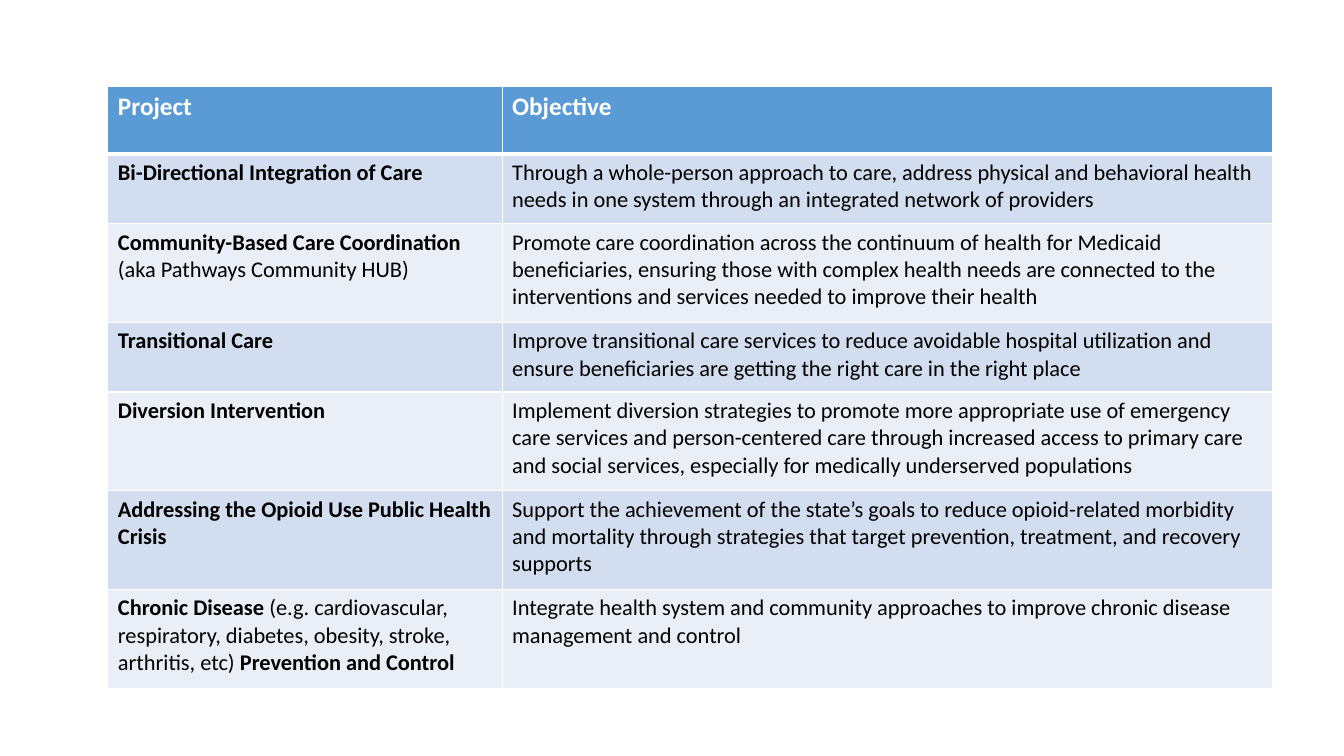
from dataclasses import dataclass

from lxml.etree import SubElement as Sub
from pptx import Presentation
from pptx.dml.color import RGBColor as RGB
from pptx.oxml.ns import qn
from pptx.util import Inches, Pt


@dataclass(frozen=True)
class Theme:
    font: str = "Calibri"
    head: str = "5B9BD5"
    bands: tuple = ("D2DEEF", "EAEFF7")
    rule: str = "FFFFFF"
    light: str = "FFFFFF"
    dark: str = "000000"
    big: int = 18
    body: int = 16
    thin: int = 1
    thick: int = 3


THEME = Theme()

# Slide size and table grid, in inches
WIDE, HIGH = 13.33, 7.5
LEFT, TOP = 1.07, 0.86
COLS = (3.91, 7.64)
HEAD = 0.67
ROWS = {2: 0.69, 3: 0.98}  # row height by number of text lines

# Text lines, project as (text, bold) runs, objective
ITEMS = [
    (2, [("Bi-Directional Integration of Care", True)],
     "Through a whole-person approach to care, address physical and "
     "behavioral health needs in one system through an integrated network "
     "of providers"),
    (3, [("Community-Based Care Coordination ", True),
         ("(aka Pathways Community HUB)", False)],
     "Promote care coordination across the continuum of health for Medicaid "
     "beneficiaries, ensuring those with complex health needs are connected "
     "to the interventions and services needed to improve their health"),
    (2, [("Transitional Care", True)],
     "Improve transitional care services to reduce avoidable hospital "
     "utilization and ensure beneficiaries are getting the right care in the "
     "right place"),
    (3, [("Diversion Intervention", True)],
     "Implement diversion strategies to promote more appropriate use of "
     "emergency care services and person-centered care through increased "
     "access to primary care and social services, especially for medically "
     "underserved populations"),
    (3, [("Addressing the Opioid Use Public Health Crisis", True)],
     "Support the achievement of the state’s goals to reduce opioid-related "
     "morbidity and mortality through strategies that target prevention, "
     "treatment, and recovery supports"),
    (3, [("Chronic Disease ", True),
         ("(e.g. cardiovascular, respiratory, diabetes, obesity, stroke, "
          "arthritis, etc) ", False),
         ("Prevention and Control", True)],
     "Integrate health system and community approaches to improve chronic "
     "disease management and control"),
]


def set_all(obj, form):
    for name, value in form.items():
        setattr(obj, name, value)


def add_rules(cell, top, base):
    """Draw the four borders of a cell."""
    props = cell._tc.get_or_add_tcPr()
    sides = {"lnL": THEME.thin, "lnR": THEME.thin, "lnT": top, "lnB": base}
    for side, width in sides.items():
        line = Sub(props, qn(f"a:{side}"), w=str(Pt(width)))
        fill = Sub(line, qn("a:solidFill"))
        Sub(fill, qn("a:srgbClr"), val=THEME.rule)


def fill_cell(cell, runs, back, ink, size, top, base):
    add_rules(cell, top, base)
    cell.fill.solid()
    cell.fill.fore_color.rgb = RGB.from_string(back)
    para = cell.text_frame.paragraphs[0]
    for text, bold in runs:
        run = para.add_run()
        run.text = text
        set_all(run.font, {"name": THEME.font, "size": Pt(size), "bold": bold})
        run.font.color.rgb = RGB.from_string(ink)


def add_grid(slide):
    highs = [HEAD] + [ROWS[lines] for lines, _, _ in ITEMS]
    box = [Inches(n) for n in (LEFT, TOP, sum(COLS), sum(highs))]
    table = slide.shapes.add_table(len(highs), len(COLS), *box).table
    for col, width in zip(table.columns, COLS):
        col.width = Inches(width)
    for row, high in zip(table.rows, highs):
        row.height = Inches(high)

    # Header row
    for col, title in enumerate(("Project", "Objective")):
        fill_cell(table.cell(0, col), [(title, True)], THEME.head,
                  THEME.light, THEME.big, THEME.thin, THEME.thick)

    # Banded project rows
    for row, (_, project, goal) in enumerate(ITEMS, 1):
        back = THEME.bands[(row - 1) % 2]
        top = THEME.thick if row == 1 else THEME.thin
        for col, runs in enumerate((project, [(goal, False)])):
            fill_cell(table.cell(row, col), runs, back, THEME.dark,
                      THEME.body, top, THEME.thin)


def main():
    deck = Presentation()
    set_all(deck, {"slide_width": Inches(WIDE), "slide_height": Inches(HIGH)})
    slide = deck.slides.add_slide(deck.slide_layouts[6])
    add_grid(slide)
    deck.save("out.pptx")


if __name__ == "__main__":
    main()
